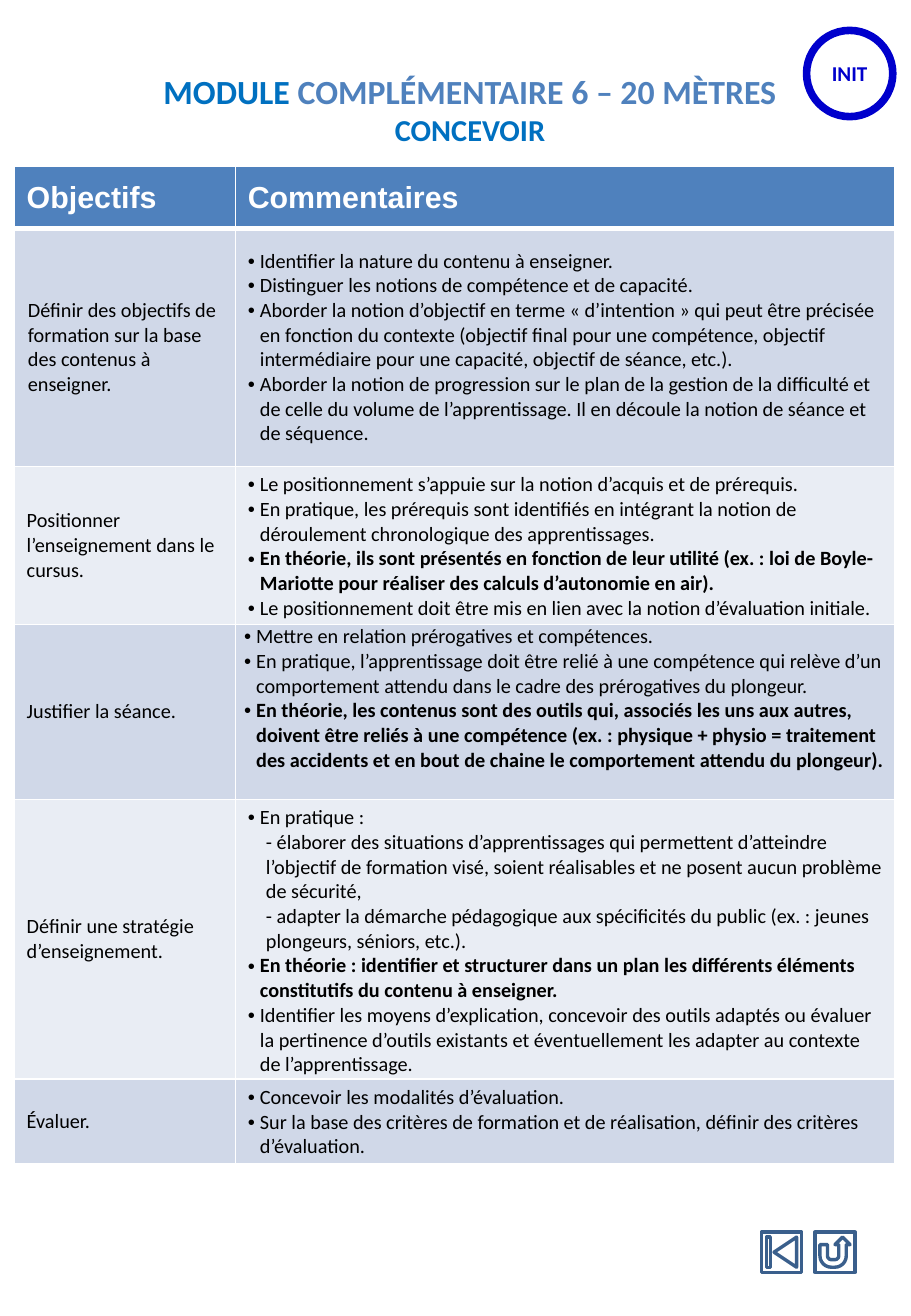
from lxml import etree
from pptx import Presentation
from pptx.dml.color import RGBColor
from pptx.enum import shapes, text
from pptx.oxml import ns
from pptx.util import Inches, Pt

COLORS = {
    "white": "FFFFFF", "black": "000000", "badge": "0000CC", "title": "0070C0",
    "header": "4F81BD", "dark_band": "D0D8E8", "light_band": "E9EDF4", "button": "3A5F8C",
}
COLUMN_WIDTHS = [1.82, 5.43]
ROW_HEIGHTS = [0.51, 1.96, 1.3, 1.44, 2.3, 0.7]
# Left margin, first-line indent, bullet, bold
STYLES = {
    "bullet": (0.1, -0.1, True, False),
    "strong": (0.1, -0.1, True, True),
    "dash": (0.15, 0, False, False),
}
OBJECTIVES = [
    ("Définir des objectifs de formation sur la base des contenus à enseigner.", [
        ("bullet", "Identifier la nature du contenu à enseigner."),
        ("bullet", "Distinguer les notions de compétence et de capacité."),
        ("bullet", "Aborder la notion d’objectif en terme « d’intention » qui peut être précisée "
                   "en fonction du contexte (objectif final pour une compétence, objectif "
                   "intermédiaire pour une capacité, objectif de séance, etc.)."),
        ("bullet", "Aborder la notion de progression sur le plan de la gestion de la difficulté "
                   "et de celle du volume de l’apprentissage. Il en découle la notion de séance "
                   "et de séquence."),
    ]),
    ("Positionner l’enseignement dans le cursus.", [
        ("bullet", "Le positionnement s’appuie sur la notion d’acquis et de prérequis."),
        ("bullet", "En pratique, les prérequis sont identifiés en intégrant la notion de "
                   "déroulement chronologique des apprentissages."),
        ("strong", "En théorie, ils sont présentés en fonction de leur utilité (ex. : loi de "
                   "Boyle-Mariotte pour réaliser des calculs d’autonomie en air)."),
        ("bullet", "Le positionnement doit être mis en lien avec la notion d’évaluation initiale."),
    ]),
    ("Justifier la séance.", [
        ("bullet", "Mettre en relation prérogatives et compétences."),
        ("bullet", "En pratique, l’apprentissage doit être relié à une compétence qui relève "
                   "d’un comportement attendu dans le cadre des prérogatives du plongeur."),
        ("strong", "En théorie, les contenus sont des outils qui, associés les uns aux autres, "
                   "doivent être reliés à une compétence (ex. : physique + physio = traitement "
                   "des accidents et en bout de chaine le comportement attendu du plongeur)."),
    ]),
    ("Définir une stratégie d’enseignement.", [
        ("bullet", "En pratique :"),
        ("dash", "- élaborer des situations d’apprentissages qui permettent d’atteindre "
                 "l’objectif de formation visé, soient réalisables et ne posent aucun problème "
                 "de sécurité,"),
        ("dash", "- adapter la démarche pédagogique aux spécificités du public (ex. : jeunes "
                 "plongeurs, séniors, etc.)."),
        ("strong", "En théorie : identifier et structurer dans un plan les différents éléments "
                   "constitutifs du contenu à enseigner."),
        ("bullet", "Identifier les moyens d’explication, concevoir des outils adaptés ou évaluer "
                   "la pertinence d’outils existants et éventuellement les adapter au contexte "
                   "de l’apprentissage."),
    ]),
    ("Évaluer.", [
        ("bullet", "Concevoir les modalités d’évaluation."),
        ("bullet", "Sur la base des critères de formation et de réalisation, définir des "
                   "critères d’évaluation."),
    ]),
]


def rgb(name):
    return RGBColor.from_string(COLORS[name])


def add_span(para, words, size=12, color="black", bold=False, font="Calibri"):
    span = para.add_run()
    span.text = words
    span.font.size = Pt(size)
    span.font.name = font
    span.font.bold = bold
    span.font.color.rgb = rgb(color)


def set_indent(para, margin, first_line, bullet=False):
    props = para._p.get_or_add_pPr()
    props.set("marL", str(Inches(margin)))
    props.set("indent", str(Inches(first_line)))
    if bullet:
        etree.SubElement(props, ns.qn("a:buFont")).set("typeface", "Arial")
        etree.SubElement(props, ns.qn("a:buChar")).set("char", "•")


def set_borders(cell, **widths):
    """Draw white cell borders, 1 point wide unless a side (L, R, T, B) says otherwise."""
    props = cell._tc.get_or_add_tcPr()
    for side in "LRTB":
        line = etree.SubElement(props, ns.qn(f"a:ln{side}"), w=str(Pt(widths.get(side, 1))))
        fill = etree.SubElement(line, ns.qn("a:solidFill"))
        etree.SubElement(fill, ns.qn("a:srgbClr"), val=COLORS["white"])


def format_cell(cell, fill, **widths):
    set_borders(cell, **widths)
    cell.fill.solid()
    cell.fill.fore_color.rgb = rgb(fill)
    cell.vertical_anchor = text.MSO_ANCHOR.MIDDLE


def fill_comments(cell, comments):
    frame = cell.text_frame
    for index, (style, words) in enumerate(comments):
        para = frame.add_paragraph() if index else frame.paragraphs[0]
        margin, first_line, bullet, bold = STYLES[style]
        set_indent(para, margin, first_line, bullet)
        add_span(para, words, bold=bold)


def add_objectives_table(slide):
    table = slide.shapes.add_table(
        len(ROW_HEIGHTS), len(COLUMN_WIDTHS), Inches(0.12), Inches(1.37),
        Inches(sum(COLUMN_WIDTHS)), Inches(sum(ROW_HEIGHTS))).table
    for column, width in zip(table.columns, COLUMN_WIDTHS):
        column.width = Inches(width)
    for row, height in zip(table.rows, ROW_HEIGHTS):
        row.height = Inches(height)

    for cell, heading in zip(table.rows[0].cells, ["Objectifs", "Commentaires"]):
        format_cell(cell, "header", B=3)
        add_span(cell.text_frame.paragraphs[0], heading, size=18, color="white",
                 bold=True, font="Arial")

    for index, (objective, comments) in enumerate(OBJECTIVES, start=1):
        fill = "dark_band" if index % 2 else "light_band"
        for cell in table.rows[index].cells:
            format_cell(cell, fill, T=3 if index == 1 else 1)
        add_span(table.cell(index, 0).text_frame.paragraphs[0], objective)
        fill_comments(table.cell(index, 1), comments)

    set_indent(table.cell(1, 0).text_frame.paragraphs[0], 0.01, 0)
    justification = table.cell(3, 1)
    justification.vertical_anchor = text.MSO_ANCHOR.TOP
    justification.margin_left = justification.margin_right = Inches(0.07)
    justification.margin_top = justification.margin_bottom = 0


def add_outline(slide, kind, left, top, size, color, weight):
    """Add a square-framed preset shape with a coloured line and no fill."""
    shape = slide.shapes.add_shape(kind, Inches(left), Inches(top), Inches(size), Inches(size))
    shape.shadow.inherit = False
    shape.fill.background()
    shape.line.color.rgb = rgb(color)
    shape.line.width = Pt(weight)
    return shape


def add_badge(slide):
    badge = add_outline(slide, shapes.MSO_SHAPE.OVAL, 6.64, 0.25, 0.71, "badge", 4.5)
    badge.fill.solid()
    badge.fill.fore_color.rgb = rgb("white")
    frame = badge.text_frame
    frame.word_wrap = False
    frame.vertical_anchor = text.MSO_ANCHOR.MIDDLE
    para = frame.paragraphs[0]
    para.alignment = text.PP_ALIGN.CENTER
    add_span(para, "INIT", size=12.5, color="badge", bold=True)


def add_title(slide):
    box = slide.shapes.add_textbox(Inches(1.12), Inches(0.53), Inches(5.5), Inches(0.74))
    frame = box.text_frame
    frame.word_wrap = True
    frame.auto_size = text.MSO_AUTO_SIZE.SHAPE_TO_FIT_TEXT
    module, phase = frame.paragraphs[0], frame.add_paragraph()
    module.alignment = phase.alignment = text.PP_ALIGN.CENTER
    add_span(module, "MODULE ", size=20, color="title", bold=True)
    add_span(module, "COMPLÉMENTAIRE 6 – 20 MÈTRES", size=20, color="header", bold=True)
    add_span(phase, "CONCEVOIR", size=18, color="title", bold=True)


def main():
    deck = Presentation()
    deck.slide_width, deck.slide_height = Inches(7.5), Inches(10.83)
    slide = deck.slides.add_slide(deck.slide_layouts[6])
    add_badge(slide)
    add_title(slide)
    add_objectives_table(slide)
    for kind, left in [(shapes.MSO_SHAPE.ACTION_BUTTON_BEGINNING, 6.27),
                       (shapes.MSO_SHAPE.ACTION_BUTTON_RETURN, 6.71)]:
        add_outline(slide, kind, left, 10.14, 0.33, "button", 2)
    deck.save("out.pptx")


if __name__ == "__main__":
    main()
